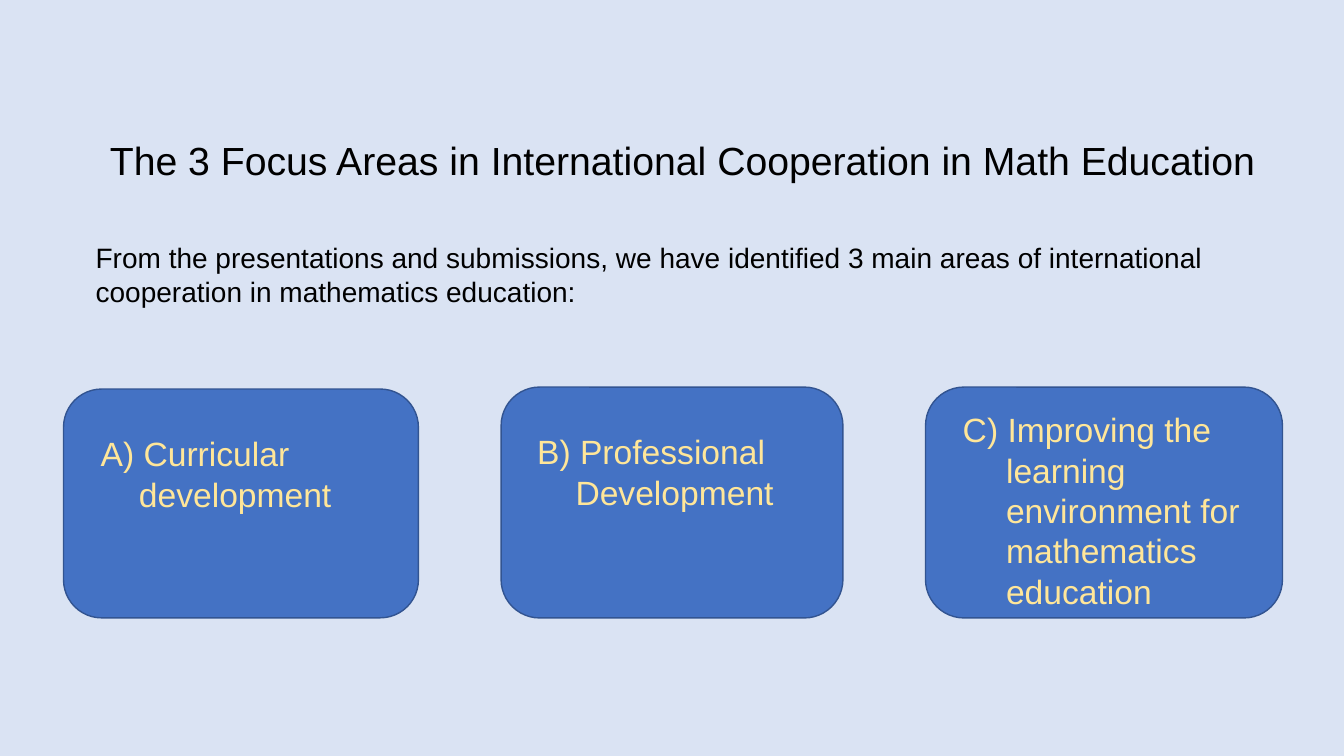
from dataclasses import dataclass

from pptx import Presentation, util as u
from pptx.dml.color import RGBColor
from pptx.enum import shapes, text

EMU_PER_PX = 9144  # 100 px to the inch


@dataclass(frozen=True)
class Theme:
    font: str = "Arial"
    background: str = "DAE3F3"
    ink: str = "000000"
    card_fill: str = "4472C4"
    card_line: str = "325491"
    card_ink: str = "FFE699"
    title_size: int = 28
    card_size: int = 24
    body_size: int = 20


@dataclass(frozen=True)
class Box:
    left: int
    top: int
    width: int
    height: int

    def emu(self) -> tuple[u.Emu, ...]:
        return tuple(px(n) for n in (self.left, self.top, self.width, self.height))


@dataclass(frozen=True)
class FocusArea:
    label: str
    card: Box
    caption: Box
    hanging: int


THEME = Theme()

TITLE = "The 3 Focus Areas in International Cooperation in Math Education"
INTRO = ("From the presentations and submissions, we have identified 3 main areas "
         "of international cooperation in mathematics education:")

AREAS = [
    FocusArea("A) Curricular development",
              Box(63, 386, 352, 227), Box(90, 425, 298, 112), 38),
    FocusArea("B) Professional Development",
              Box(497, 384, 339, 229), Box(523, 423, 287, 91), 38),
    FocusArea("C) Improving the learning environment for mathematics education",
              Box(918, 384, 354, 229), Box(945, 401, 299, 212), 43),
]


def px(n: int) -> u.Emu:
    return u.Emu(n * EMU_PER_PX)


def rgb(value: str) -> RGBColor:
    return RGBColor.from_string(value)


def write(sp, content: str, *, size: int, color: str = THEME.ink, hanging: int = 0,
          spacing: float = 1.0, anchor=text.MSO_ANCHOR.TOP,
          fit=text.MSO_AUTO_SIZE.SHAPE_TO_FIT_TEXT) -> None:
    """Fill a shape with one left-aligned paragraph."""
    tf = sp.text_frame
    tf.word_wrap = True
    tf.auto_size = fit
    tf.vertical_anchor = anchor
    p = tf.paragraphs[0]
    p.alignment = text.PP_ALIGN.LEFT
    p.line_spacing = spacing
    if hanging:
        pPr = p._p.get_or_add_pPr()
        pPr.set("marL", str(px(hanging)))
        pPr.set("indent", str(-px(hanging)))
    r = p.add_run()
    r.text = content
    r.font.name = THEME.font
    r.font.size = u.Pt(size)
    r.font.color.rgb = rgb(color)


def draw_title(s) -> None:
    title = s.shapes.title
    title.left, title.top, title.width, title.height = Box(99, 89, 1172, 145).emu()
    write(title, TITLE, size=THEME.title_size, spacing=0.9,
          anchor=text.MSO_ANCHOR.MIDDLE, fit=text.MSO_AUTO_SIZE.NONE)


def draw_area(s, area: FocusArea) -> None:
    group = s.shapes.add_group_shape()
    card = group.shapes.add_shape(shapes.MSO_SHAPE.ROUNDED_RECTANGLE, *area.card.emu())
    card.shadow.inherit = False
    card.fill.solid()
    card.fill.fore_color.rgb = rgb(THEME.card_fill)
    card.line.color.rgb = rgb(THEME.card_line)
    card.line.width = u.Pt(1)
    caption = group.shapes.add_textbox(*area.caption.emu())
    write(caption, area.label, size=THEME.card_size, color=THEME.card_ink,
          hanging=area.hanging)


def main() -> None:
    prs = Presentation()
    prs.slide_width, prs.slide_height = px(1333), px(750)
    s = prs.slides.add_slide(prs.slide_layouts.get_by_name("Title Only"))
    s.background.fill.solid()
    s.background.fill.fore_color.rgb = rgb(THEME.background)

    # Heading
    draw_title(s)

    # Focus area cards
    for area in AREAS:
        draw_area(s, area)

    # Introduction
    intro = s.shapes.add_textbox(*Box(85, 234, 1172, 77).emu())
    write(intro, INTRO, size=THEME.body_size)

    prs.save("out.pptx")


if __name__ == "__main__":
    main()
